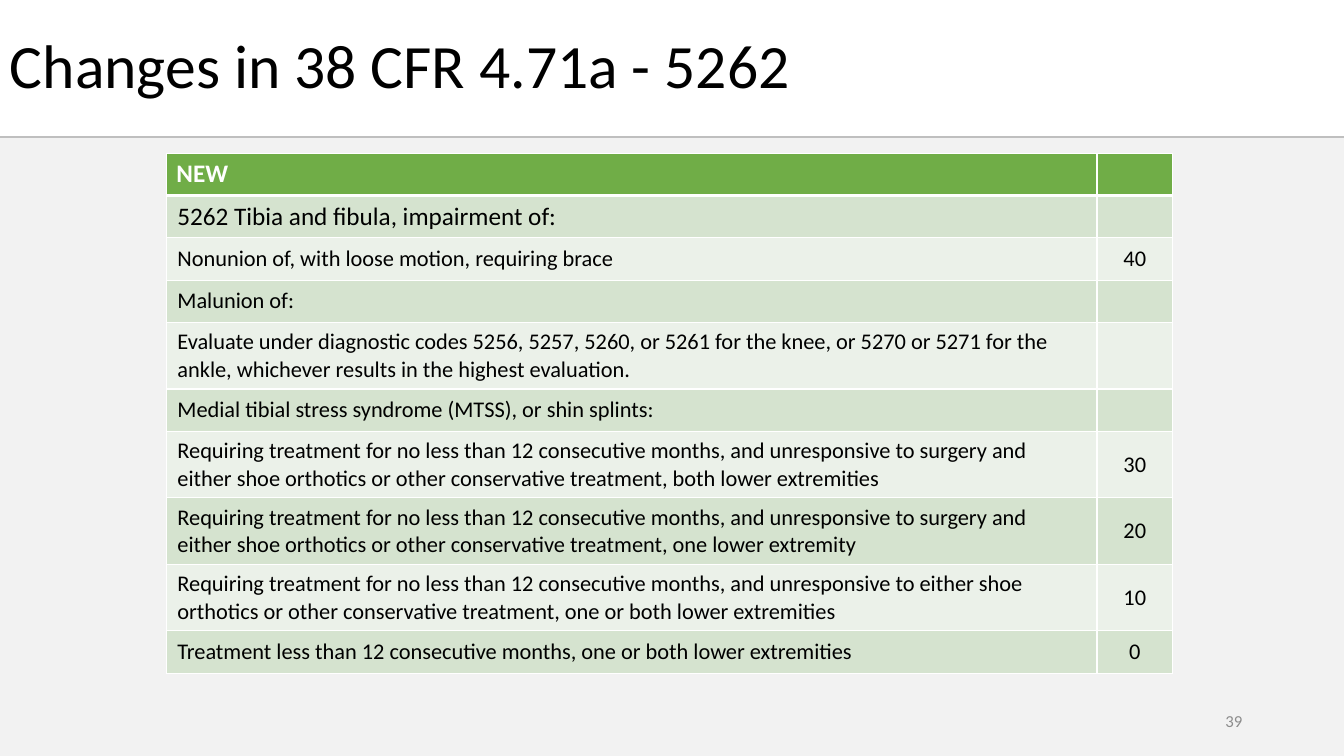
from dataclasses import dataclass

from lxml.etree import SubElement
from pptx import Presentation
from pptx.dml.color import RGBColor
from pptx.enum.shapes import MSO_CONNECTOR as CONNECTOR, MSO_SHAPE as SHAPE
from pptx.enum.text import MSO_ANCHOR as ANCHOR, PP_ALIGN as ALIGN
from pptx.oxml.ns import qn
from pptx.util import Inches, Pt

TITLE = "Changes in 38 CFR 4.71a - 5262"
PAGE_NUMBER = "39"
TREATMENT = "Requiring treatment for no less than 12 consecutive months, and unresponsive to "
SURGERY = TREATMENT + "surgery and either shoe orthotics or other conservative treatment, "

# Wording, rating, lines of text
RATINGS = [
    ("NEW", "", 1),
    ("5262 Tibia and fibula, impairment of:", "", 1),
    ("Nonunion of, with loose motion, requiring brace", "40", 1),
    ("Malunion of:", "", 1),
    ("Evaluate under diagnostic codes 5256, 5257, 5260, or 5261 for the knee, "
     "or 5270 or 5271 for the ankle, whichever results in the highest evaluation.", "", 2),
    ("Medial tibial stress syndrome (MTSS), or shin splints:", "", 1),
    (SURGERY + "both lower extremities", "30", 2),
    (SURGERY + "one lower extremity", "20", 2),
    (TREATMENT + "either shoe orthotics or other conservative treatment, "
     "one or both lower extremities", "10", 2),
    ("Treatment less than 12 consecutive months, one or both lower extremities", "0", 1),
]


@dataclass(frozen=True)
class Theme:
    font: str = "Calibri"
    text: str = "000000"
    white: str = "FFFFFF"
    panel: str = "F2F2F2"
    rule: str = "BFBFBF"
    muted: str = "8C8C8C"
    header: str = "70AD47"
    bands: tuple = ("EBF1E9", "D5E3CF")
    title_size: int = 44
    heading_size: int = 18
    body_size: int = 16
    small_size: int = 12


T = Theme()
WIDTH, HEIGHT = 13.33, 7.5
PANEL_TOP = 1.37
TABLE_LEFT, TABLE_TOP = 1.65, 1.52
COLUMNS = (9.23, 0.75)
ROW_HEIGHTS = {1: 0.42, 2: 0.66}


def write(tf, text, size, color=T.text, bold=False, align=ALIGN.LEFT, spacing=None):
    p = tf.paragraphs[0]
    p.alignment = align
    p.line_spacing = spacing
    r = p.add_run()
    r.text = text
    r.font.name, r.font.size, r.font.bold = T.font, Pt(size), bold
    r.font.color.rgb = RGBColor.from_string(color)


def add_text(s, box, text, size, **style):
    tf = s.shapes.add_textbox(*map(Inches, box)).text_frame
    tf.word_wrap = True
    tf.vertical_anchor = ANCHOR.MIDDLE
    write(tf, text, size, **style)


def add_background(s):
    panel = s.shapes.add_shape(SHAPE.RECTANGLE, 0, Inches(PANEL_TOP),
                               Inches(WIDTH), Inches(HEIGHT - PANEL_TOP))
    panel.shadow.inherit = False
    panel.fill.solid()
    panel.fill.fore_color.rgb = RGBColor.from_string(T.panel)
    panel.line.fill.background()
    y = Inches(PANEL_TOP - 0.01)
    rule = s.shapes.add_connector(CONNECTOR.STRAIGHT, 0, y, Inches(WIDTH), y)
    rule.line.color.rgb = RGBColor.from_string(T.rule)
    rule.line.width = Pt(1.5)
    SubElement(rule._element.spPr, qn("a:effectLst"))


def paint_cell(cell, row):
    """Set the borders, then the fill, as the cell's XML order requires."""
    tcPr = cell._tc.get_or_add_tcPr()
    heavy = {0: "lnB", 1: "lnT"}.get(row)
    for side in ("lnL", "lnR", "lnT", "lnB"):
        ln = SubElement(tcPr, qn(f"a:{side}"), w=str(Pt(3 if side == heavy else 1)))
        SubElement(SubElement(ln, qn("a:solidFill")), qn("a:srgbClr"), val=T.white)
    cell.fill.solid()
    cell.fill.fore_color.rgb = RGBColor.from_string(T.bands[row % 2] if row else T.header)


def add_ratings(s):
    heights = [ROW_HEIGHTS[lines] for *_, lines in RATINGS]
    box = (TABLE_LEFT, TABLE_TOP, sum(COLUMNS), sum(heights))
    table = s.shapes.add_table(len(RATINGS), len(COLUMNS), *map(Inches, box)).table
    for column, width in zip(table.columns, COLUMNS):
        column.width = Inches(width)
    for i, (*texts, _) in enumerate(RATINGS):
        table.rows[i].height = Inches(heights[i])
        for j, text in enumerate(texts):
            cell = table.cell(i, j)
            paint_cell(cell, i)
            if not text:
                continue
            if i:
                cell.vertical_anchor = ANCHOR.MIDDLE
                cell.margin_left = cell.margin_right = Inches(0.11)
                cell.margin_top = cell.margin_bottom = Inches(0.06)
            write(cell.text_frame, text, T.heading_size if i < 2 else T.body_size,
                  color=T.text if i else T.white, bold=i == 0,
                  align=ALIGN.CENTER if j else ALIGN.LEFT)


def main():
    prs = Presentation()
    prs.slide_width, prs.slide_height = Inches(WIDTH), Inches(HEIGHT)
    s = prs.slides.add_slide(prs.slide_layouts[6])
    add_background(s)
    add_text(s, (0, 0.15, 8.83, 1.07), TITLE, T.title_size, spacing=0.9)
    add_ratings(s)
    add_text(s, (9.42, 6.95, 3, 0.4), PAGE_NUMBER, T.small_size,
             color=T.muted, align=ALIGN.RIGHT)
    prs.save("out.pptx")


if __name__ == "__main__":
    main()
